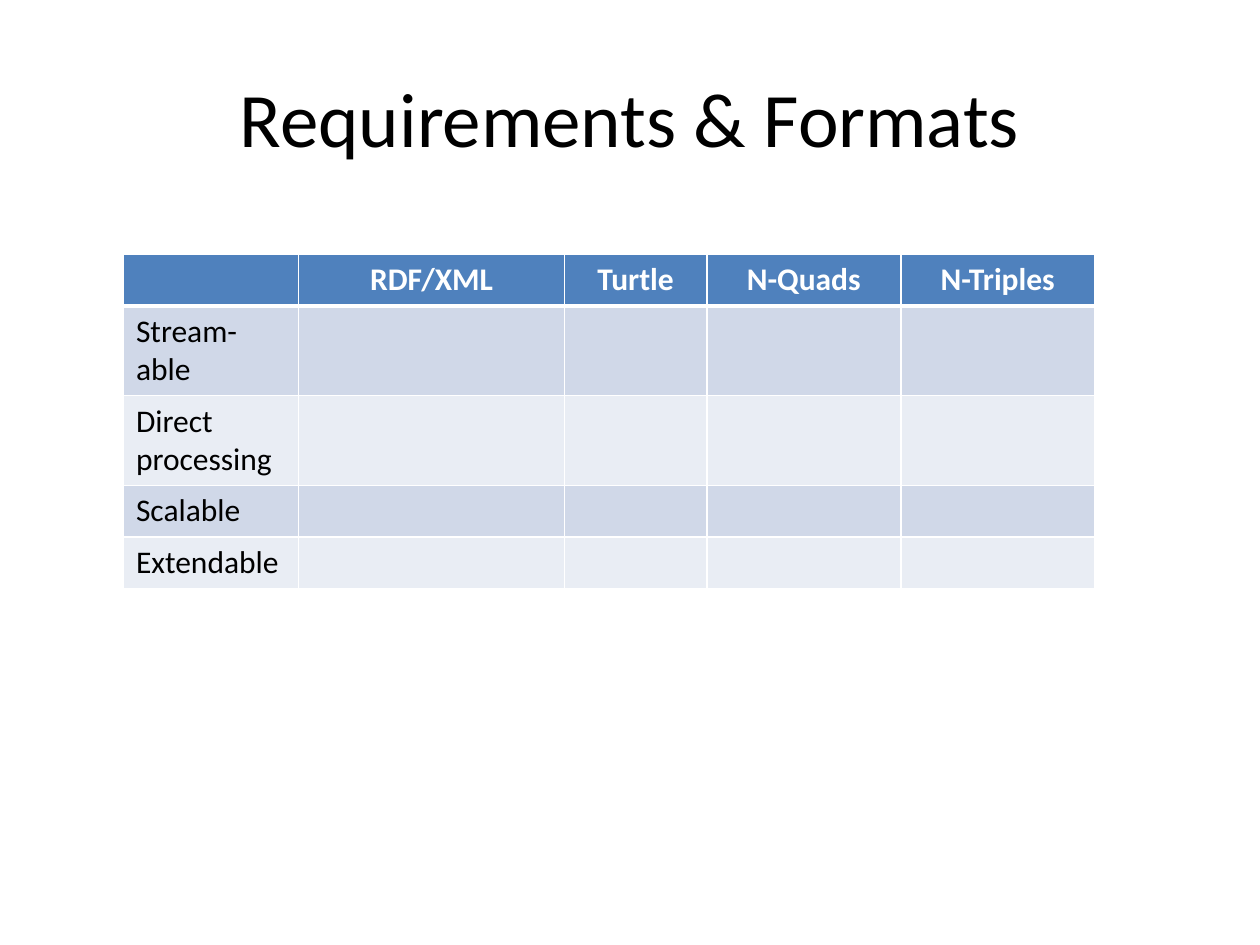
from lxml.etree import SubElement
from pptx import Presentation
from pptx.dml.color import RGBColor
from pptx.enum.text import MSO_ANCHOR, PP_ALIGN
from pptx.oxml.ns import qn
from pptx.util import Inches, Pt

HEADERS = ["", "RDF/XML", "Turtle", "N-Quads", "N-Triples"]
REQUIREMENTS = ["Stream-able", "Direct processing", "Scalable", "Extendable"]
COLUMN_WIDTHS = [1.39, 2.11, 1.13, 1.54, 1.54]


def color(value):
    return RGBColor.from_string(value)


class SlideBuilder:
    font = "Calibri"
    text_color = "000000"
    header_text = "FFFFFF"
    header_fill = "4F81BD"
    band_fills = ["D0D8E8", "E9EDF4"]
    border_color = "FFFFFF"

    def __init__(self, slide):
        self.slide = slide

    def format_text(self, paragraph, size, text_color, alignment, bold=False):
        paragraph.alignment = alignment
        for run in paragraph.runs:
            run.font.name = self.font
            run.font.size = Pt(size)
            run.font.bold = bold
            run.font.color.rgb = color(text_color)

    def title(self, text, left, top, width, height):
        shape = self.slide.shapes.title
        shape.left, shape.top = Inches(left), Inches(top)
        shape.width, shape.height = Inches(width), Inches(height)
        shape.text_frame.text = text
        shape.text_frame.vertical_anchor = MSO_ANCHOR.MIDDLE
        self.format_text(shape.text_frame.paragraphs[0], 44, self.text_color, PP_ALIGN.CENTER)

    def borders(self, cell, top, bottom):
        properties = cell._tc.get_or_add_tcPr()
        for side, width in (("L", 1), ("R", 1), ("T", top), ("B", bottom)):
            line = SubElement(properties, qn(f"a:ln{side}"), w=str(Pt(width)))
            fill = SubElement(line, qn("a:solidFill"))
            SubElement(fill, qn("a:srgbClr"), val=self.border_color)

    def cell(self, cell, text, row):
        is_header = row == 0
        self.borders(cell, 3 if row == 1 else 1, 3 if is_header else 1)
        cell.fill.solid()
        fill = self.header_fill if is_header else self.band_fills[(row - 1) % 2]
        cell.fill.fore_color.rgb = color(fill)
        cell.text_frame.text = text
        self.format_text(
            cell.text_frame.paragraphs[0],
            18,
            self.header_text if is_header else self.text_color,
            PP_ALIGN.CENTER if is_header else PP_ALIGN.LEFT,
            is_header,
        )

    def table(self, rows, widths, left, top, height, row_height):
        frame = self.slide.shapes.add_table(
            len(rows), len(widths), Inches(left), Inches(top), Inches(sum(widths)), Inches(height)
        )
        table = frame.table
        for column, width in zip(table.columns, widths):
            column.width = Inches(width)
        for row_index, texts in enumerate(rows):
            table.rows[row_index].height = Inches(row_height)
            for column_index, text in enumerate(texts):
                self.cell(table.cell(row_index, column_index), text, row_index)
        frame.height = Inches(height)


def main():
    presentation = Presentation()
    presentation.slide_width, presentation.slide_height = Inches(10), Inches(7.5)
    builder = SlideBuilder(presentation.slides.add_slide(presentation.slide_layouts[5]))
    builder.title("Requirements & Formats", 0.5, 0.3, 9, 1.25)
    blank_cells = [""] * (len(HEADERS) - 1)
    rows = [HEADERS] + [[requirement] + blank_cells for requirement in REQUIREMENTS]
    builder.table(rows, COLUMN_WIDTHS, 0.98, 2.02, 2.62, 0.41)
    presentation.save("out.pptx")


if __name__ == "__main__":
    main()
